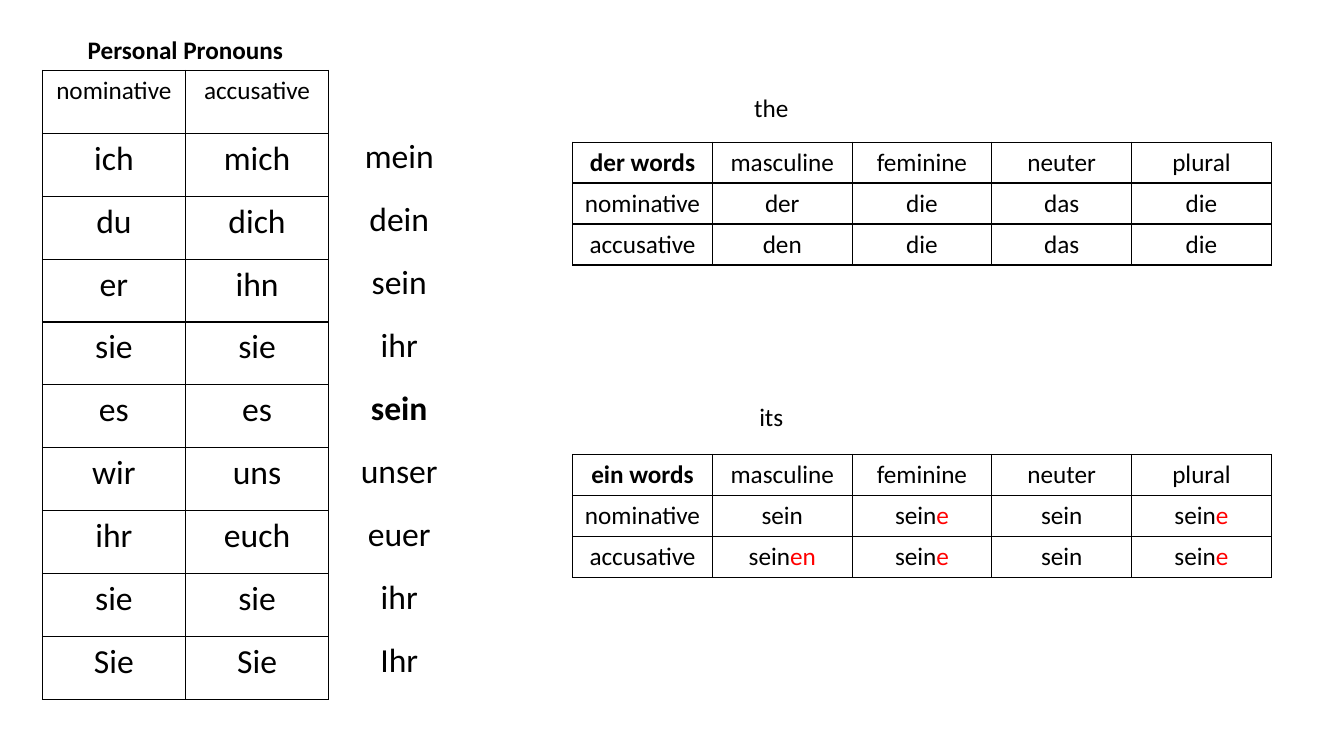
from dataclasses import dataclass

from lxml.etree import SubElement
from pptx import Presentation
from pptx.dml.color import RGBColor
from pptx.enum.text import PP_ALIGN
from pptx.oxml.ns import qn
from pptx.util import Inches, Pt


@dataclass(frozen=True)
class Theme:
    font: str = "Calibri"
    ink: str = "000000"
    ending: str = "FF0000"
    label_size: int = 18
    word_size: int = 24
    border: float = 1


THEME = Theme()


@dataclass(frozen=True)
class Caption:
    text: str
    left: float
    top: float
    bold: bool = False


@dataclass(frozen=True)
class Grid:
    """A word table; '|' in a word sets off its coloured ending."""
    left: float
    top: float
    width: float
    height: float
    rows: list[list[str]]
    size: int = THEME.label_size
    header_size: int = THEME.label_size
    bold_cell: tuple[int, int] | None = None
    bordered: bool = True


CASE_HEADINGS = ["masculine", "feminine", "neuter", "plural"]

GRIDS = [
    Grid(5.68, 4.51, 6.93, 1.22, [
        ["ein words", *CASE_HEADINGS],
        ["nominative", "sein", "sein|e", "sein", "sein|e"],
        ["accusative", "sein|en", "sein|e", "sein", "sein|e"],
    ], bold_cell=(0, 0)),
    Grid(5.68, 1.41, 6.93, 1.22, [
        ["der words", *CASE_HEADINGS],
        ["nominative", "der", "die", "das", "die"],
        ["accusative", "den", "die", "das", "die"],
    ], bold_cell=(0, 0)),
    Grid(0.42, 0.7, 2.84, 6.24, [
        ["nominative", "accusative"],
        ["ich", "mich"],
        ["du", "dich"],
        ["er", "ihn"],
        ["sie", "sie"],
        ["es", "es"],
        ["wir", "uns"],
        ["ihr", "euch"],
        ["sie", "sie"],
        ["Sie", "Sie"],
    ], size=THEME.word_size),
    Grid(3.33, 1.31, 1.26, 5.62, [
        ["mein"], ["dein"], ["sein"], ["ihr"], ["sein"],
        ["unser"], ["euer"], ["ihr"], ["Ihr"],
    ], size=THEME.word_size, header_size=THEME.word_size,
        bold_cell=(4, 0), bordered=False),
]

CAPTIONS = [
    Caption("Personal Pronouns", 0.46, 0.29, bold=True),
    Caption("the", 6.27, 0.87),
    Caption("its", 6.27, 3.93),
]


def write_text(frame, text: str, *, size: int, bold: bool = False) -> None:
    """Write one centred line, colouring whatever follows a '|'."""
    para = frame.paragraphs[0]
    para.alignment = PP_ALIGN.CENTER
    for part, color in zip(text.split("|"), (THEME.ink, THEME.ending)):
        span = para.add_run()
        span.text = part
        span.font.name = THEME.font
        span.font.size = Pt(size)
        span.font.bold = bold
        span.font.color.rgb = RGBColor.from_string(color)


def set_borders(cell, bordered: bool) -> None:
    properties = cell._tc.get_or_add_tcPr()
    for side in ("a:lnL", "a:lnR", "a:lnT", "a:lnB"):
        line = SubElement(properties, qn(side), w=str(Pt(THEME.border)))
        if bordered:
            fill = SubElement(line, qn("a:solidFill"))
            SubElement(fill, qn("a:srgbClr"), val=THEME.ink)
        else:
            SubElement(line, qn("a:noFill"))


def add_grid(page, grid: Grid) -> None:
    row_count, column_count = len(grid.rows), len(grid.rows[0])
    table = page.shapes.add_table(
        row_count, column_count, Inches(grid.left), Inches(grid.top),
        Inches(grid.width), Inches(grid.height)).table
    table.first_row = False
    table.horz_banding = False
    for row_index, words in enumerate(grid.rows):
        size = grid.size if row_index else grid.header_size
        for column_index, word in enumerate(words):
            cell = table.cell(row_index, column_index)
            set_borders(cell, grid.bordered)
            cell.fill.background()
            write_text(cell.text_frame, word, size=size,
                       bold=(row_index, column_index) == grid.bold_cell)


def add_caption(page, caption: Caption) -> None:
    box = page.shapes.add_textbox(Inches(caption.left), Inches(caption.top),
                                  Inches(2.76), Inches(0.4))
    box.text_frame.word_wrap = True
    write_text(box.text_frame, caption.text, size=THEME.label_size,
               bold=caption.bold)


def main() -> None:
    deck = Presentation()
    deck.slide_width, deck.slide_height = Inches(13.33), Inches(7.5)
    page = deck.slides.add_slide(deck.slide_layouts[6])
    for grid in GRIDS:
        add_grid(page, grid)
    for caption in CAPTIONS:
        add_caption(page, caption)
    deck.save("out.pptx")


if __name__ == "__main__":
    main()
